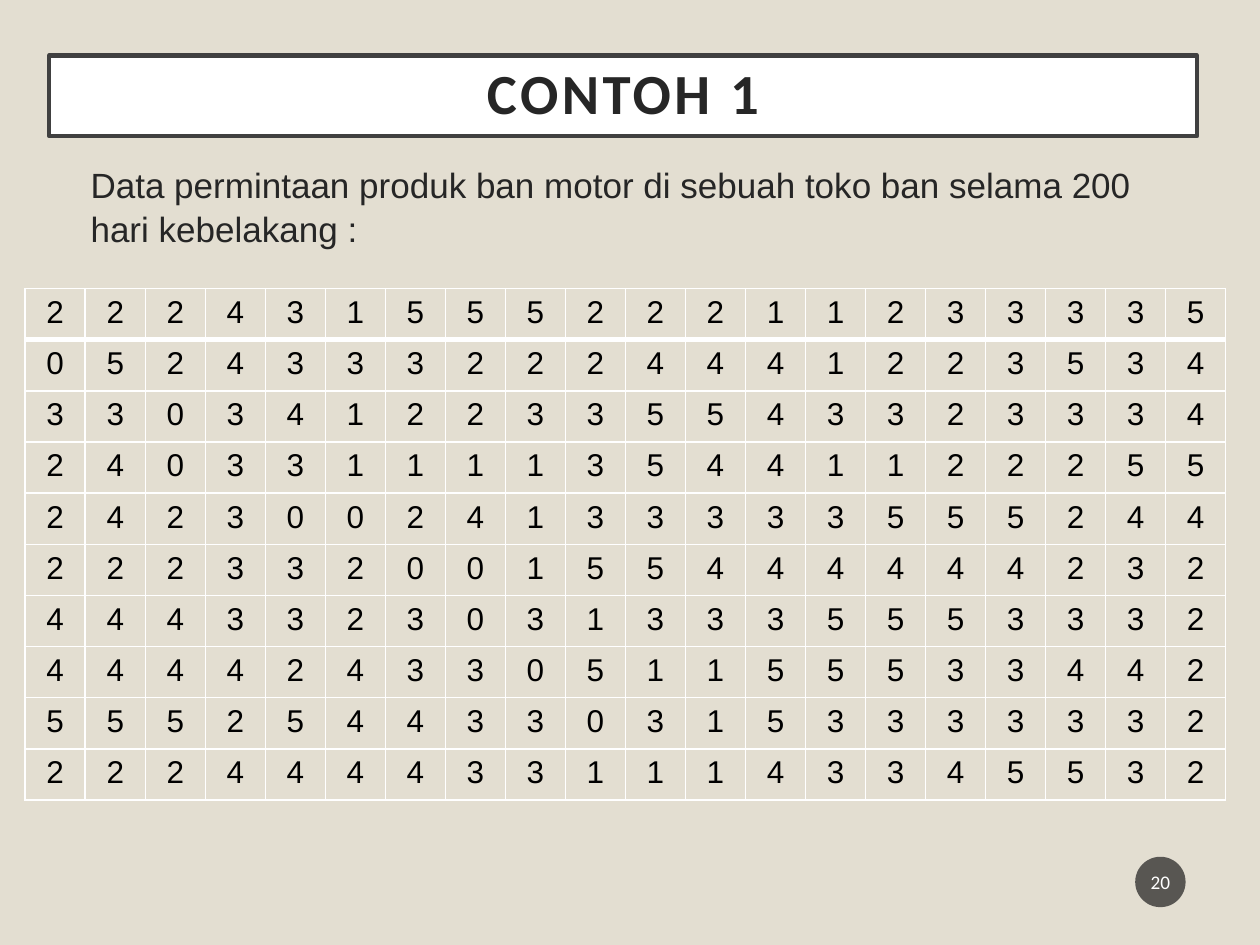
from dataclasses import dataclass

from lxml.etree import SubElement
from pptx import Presentation
from pptx.dml.color import RGBColor
from pptx.enum.shapes import MSO_SHAPE
from pptx.enum.text import MSO_ANCHOR, MSO_AUTO_SIZE, PP_ALIGN
from pptx.oxml.ns import qn
from pptx.util import Inches, Pt


@dataclass(frozen=True)
class TextStyle:
    font: str
    size: float
    color: str
    bold: bool = False
    align: PP_ALIGN = PP_ALIGN.CENTER
    line_spacing: float = 1.0
    tracking: float = 0


@dataclass(frozen=True)
class Theme:
    background: str = "E3DED1"
    white: str = "FFFFFF"
    frame: str = "404040"
    badge: str = "1D1D1D"
    badge_opacity: int = 70
    title: TextStyle = TextStyle("Calibri", 32.4, "262626", bold=True, line_spacing=0.9, tracking=2)
    intro: TextStyle = TextStyle("Arial", 20, "262626", align=PP_ALIGN.LEFT, line_spacing=1.05)
    number: TextStyle = TextStyle("Calibri", 11, "FFFFFF")
    cell: TextStyle = TextStyle("Arial", 18, "000000")


@dataclass(frozen=True)
class Area:
    left: float
    top: float
    width: float
    height: float

    def lengths(self) -> tuple:
        return tuple(Inches(value) for value in (self.left, self.top, self.width, self.height))


THEME = Theme()
TITLE_AREA = Area(0.39, 0.44, 9.11, 0.64)
INTRO_AREA = Area(0.62, 1.23, 8.88, 0.87)
NUMBER_AREA = Area(9.01, 6.8, 0.4, 0.4)
TABLE_AREA = Area(0.2, 2.29, 9.53, 4.06)

# One line per table row, one digit per day.
DAILY_DEMAND = (
    "22243155522211233335",
    "05243332224441223534",
    "33034122335543323334",
    "24033111135441122255",
    "24230024133333555244",
    "22233200155444444232",
    "44433230313335553332",
    "44442433051155533442",
    "55525443303153333332",
    "22244443311143345532",
)


def set_all(target, values: dict) -> None:
    for name, value in values.items():
        setattr(target, name, value)


def write_text(frame, text: str, style: TextStyle) -> None:
    para = frame.paragraphs[0]
    set_all(para, {"alignment": style.align, "line_spacing": style.line_spacing})
    span = para.add_run()
    span.text = text
    set_all(span.font, {"name": style.font, "size": Pt(style.size), "bold": style.bold})
    span.font.color.rgb = RGBColor.from_string(style.color)
    if style.tracking:
        span.font._element.set("spc", str(int(style.tracking * 100)))


def set_frame(frame, side: float, end: float, anchor: MSO_ANCHOR) -> None:
    """Set the insets in inches (side for left and right, end for top and bottom)."""
    set_all(frame, {
        "word_wrap": True,
        "auto_size": MSO_AUTO_SIZE.NONE,
        "vertical_anchor": anchor,
        "margin_left": Inches(side),
        "margin_right": Inches(side),
        "margin_top": Inches(end),
        "margin_bottom": Inches(end),
    })


def fill_solid(target, color: str) -> None:
    target.fill.solid()
    target.fill.fore_color.rgb = RGBColor.from_string(color)


def add_title(page, text: str) -> None:
    box = page.shapes.title
    box.left, box.top, box.width, box.height = TITLE_AREA.lengths()
    fill_solid(box, THEME.white)
    box.line.color.rgb = RGBColor.from_string(THEME.frame)
    box.line.width = Pt(2.5)
    set_frame(box.text_frame, 0.2, 0.2, MSO_ANCHOR.MIDDLE)
    write_text(box.text_frame, text, THEME.title)


def add_intro(page, text: str) -> None:
    box = page.shapes.add_textbox(*INTRO_AREA.lengths())
    set_frame(box.text_frame, 0.1, 0.05, MSO_ANCHOR.TOP)
    write_text(box.text_frame, text, THEME.intro)


def add_page_number(page, text: str) -> None:
    badge = page.shapes.add_shape(MSO_SHAPE.OVAL, *NUMBER_AREA.lengths())
    badge.shadow.inherit = False
    fill_solid(badge, THEME.badge)
    color = badge._element.spPr.find(qn("a:solidFill"))[0]
    SubElement(color, qn("a:alpha"), val=str(THEME.badge_opacity * 1000))
    badge.line.fill.background()
    set_frame(badge.text_frame, 0.02, 0.05, MSO_ANCHOR.MIDDLE)
    write_text(badge.text_frame, text, THEME.number)


def set_borders(cell, widths: dict[str, float]) -> None:
    """Draw white borders; widths are points by side, in the order L, R, T, B."""
    properties = cell._tc.get_or_add_tcPr()
    for side, width in widths.items():
        line = SubElement(properties, qn(f"a:ln{side}"), w=str(Pt(width)))
        fill = SubElement(line, qn("a:solidFill"))
        SubElement(fill, qn("a:srgbClr"), val=THEME.white)


def add_demand_table(page, rows: tuple[str, ...]) -> None:
    column_count = len(rows[0])
    table = page.shapes.add_table(len(rows), column_count, *TABLE_AREA.lengths()).table
    set_all(table, {"first_row": False, "horz_banding": False})
    for column in table.columns:
        column.width = Inches(TABLE_AREA.width / column_count)
    for row in table.rows:
        row.height = Inches(TABLE_AREA.height / len(rows))
    for row_index, digits in enumerate(rows):
        top = 3 if row_index == 1 else 1
        bottom = 3 if row_index == 0 else 1
        for column_index, digit in enumerate(digits):
            cell = table.cell(row_index, column_index)
            set_borders(cell, {"L": 1, "R": 1, "T": top, "B": bottom})
            cell.fill.background()
            write_text(cell.text_frame, digit, THEME.cell)


def main() -> None:
    deck = Presentation()
    set_all(deck, {"slide_width": Inches(10), "slide_height": Inches(7.5)})
    page = deck.slides.add_slide(deck.slide_layouts.get_by_name("Title Only"))
    fill_solid(page.background, THEME.background)
    add_title(page, "CONTOH 1")
    add_intro(page, "Data permintaan produk ban motor di sebuah toko ban selama 200 hari kebelakang :")
    add_page_number(page, "20")
    add_demand_table(page, DAILY_DEMAND)
    deck.save("out.pptx")


if __name__ == "__main__":
    main()
